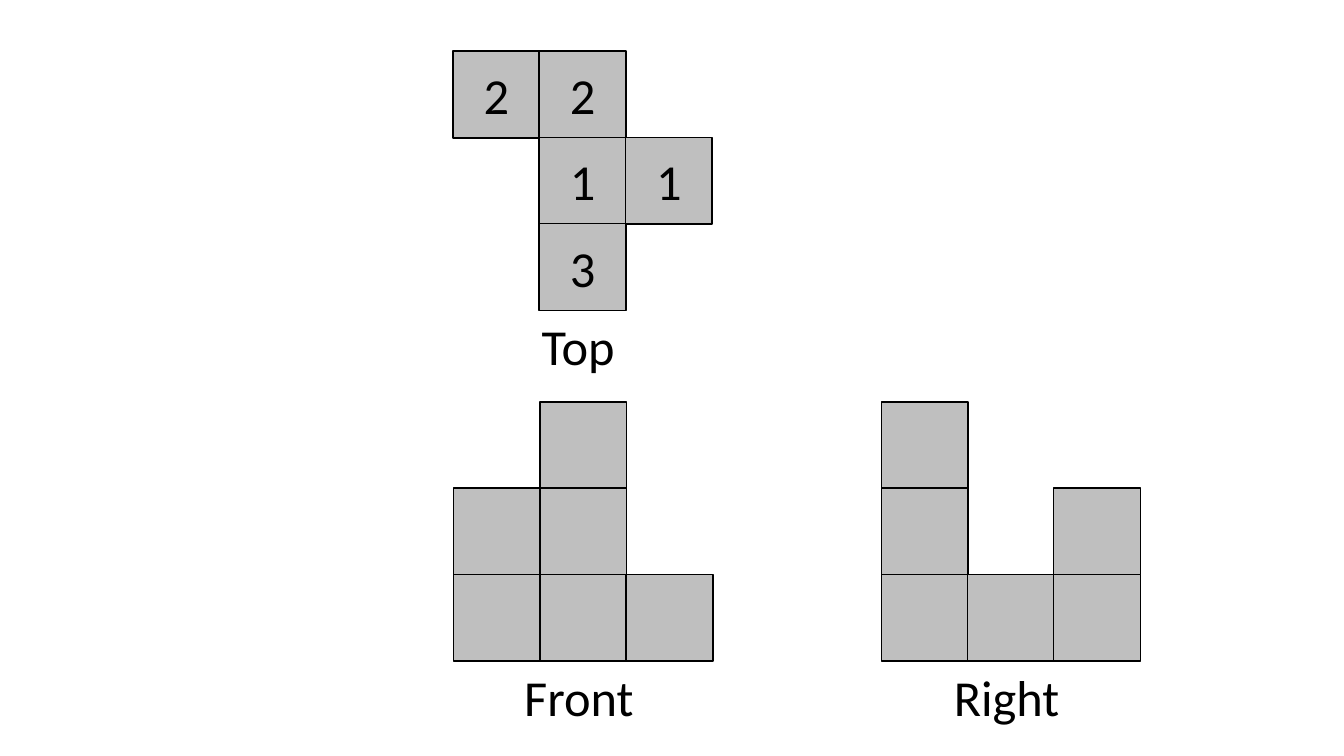
from dataclasses import dataclass

from pptx import Presentation
from pptx.dml.color import RGBColor
from pptx.enum.shapes import MSO_SHAPE
from pptx.enum.text import MSO_ANCHOR, PP_ALIGN
from pptx.util import Pt

RECTANGLE = MSO_SHAPE.RECTANGLE
MIDDLE = MSO_ANCHOR.MIDDLE
CENTER = PP_ALIGN.CENTER


@dataclass(frozen=True)
class Theme:
    font: str = "Calibri"
    text_size: float = 36
    text_color: RGBColor = RGBColor(0x00, 0x00, 0x00)
    cube_fill: RGBColor = RGBColor(0xBF, 0xBF, 0xBF)
    cube_line: RGBColor = RGBColor(0x00, 0x00, 0x00)
    line_width: float = 1


class ViewSlide:
    CUBE = 62
    PITCH = 61.6
    ROWS = 3
    LABEL_INDENT = 27
    LABEL_WIDTH = 125
    LABEL_HEIGHT = 51

    def __init__(self, slide, theme):
        self.slide = slide
        self.theme = theme

    def set_text(self, shape, text):
        frame = shape.text_frame
        frame.text = text
        frame.word_wrap = True
        frame.vertical_anchor = MIDDLE
        paragraph = frame.paragraphs[0]
        paragraph.alignment = CENTER
        for run in paragraph.runs:
            run.font.name = self.theme.font
            run.font.size = Pt(self.theme.text_size)
            run.font.color.rgb = self.theme.text_color

    def cube(self, left, top, count):
        shape = self.slide.shapes.add_shape(
            RECTANGLE, Pt(left), Pt(top), Pt(self.CUBE), Pt(self.CUBE)
        )
        shape.shadow.inherit = False
        shape.fill.solid()
        shape.fill.fore_color.rgb = self.theme.cube_fill
        shape.line.color.rgb = self.theme.cube_line
        shape.line.width = Pt(self.theme.line_width)
        if count:
            self.set_text(shape, count)

    def label(self, left, top, text):
        box = self.slide.shapes.add_textbox(
            Pt(left), Pt(top), Pt(self.LABEL_WIDTH), Pt(self.LABEL_HEIGHT)
        )
        self.set_text(box, text)

    def view(self, name, left, top, rows):
        for row, marks in enumerate(rows):
            for column, mark in enumerate(marks):
                if mark != " ":
                    self.cube(
                        left + column * self.PITCH,
                        top + row * self.PITCH,
                        mark.strip("#"),
                    )
        self.label(left + self.LABEL_INDENT, top + self.ROWS * self.PITCH, name)


VIEWS = [
    ("Top", 323.5, 36.5, ["22 ", " 11", " 3 "]),
    ("Front", 324, 287, [" # ", "## ", "###"]),
    ("Right", 629.5, 287, ["#  ", "# #", "###"]),
]


def main():
    presentation = Presentation()
    presentation.slide_width = Pt(960)
    presentation.slide_height = Pt(540)
    slide = presentation.slides.add_slide(presentation.slide_layouts[6])
    view_slide = ViewSlide(slide, Theme())
    for name, left, top, rows in VIEWS:
        view_slide.view(name, left, top, rows)
    presentation.save("out.pptx")


if __name__ == "__main__":
    main()
